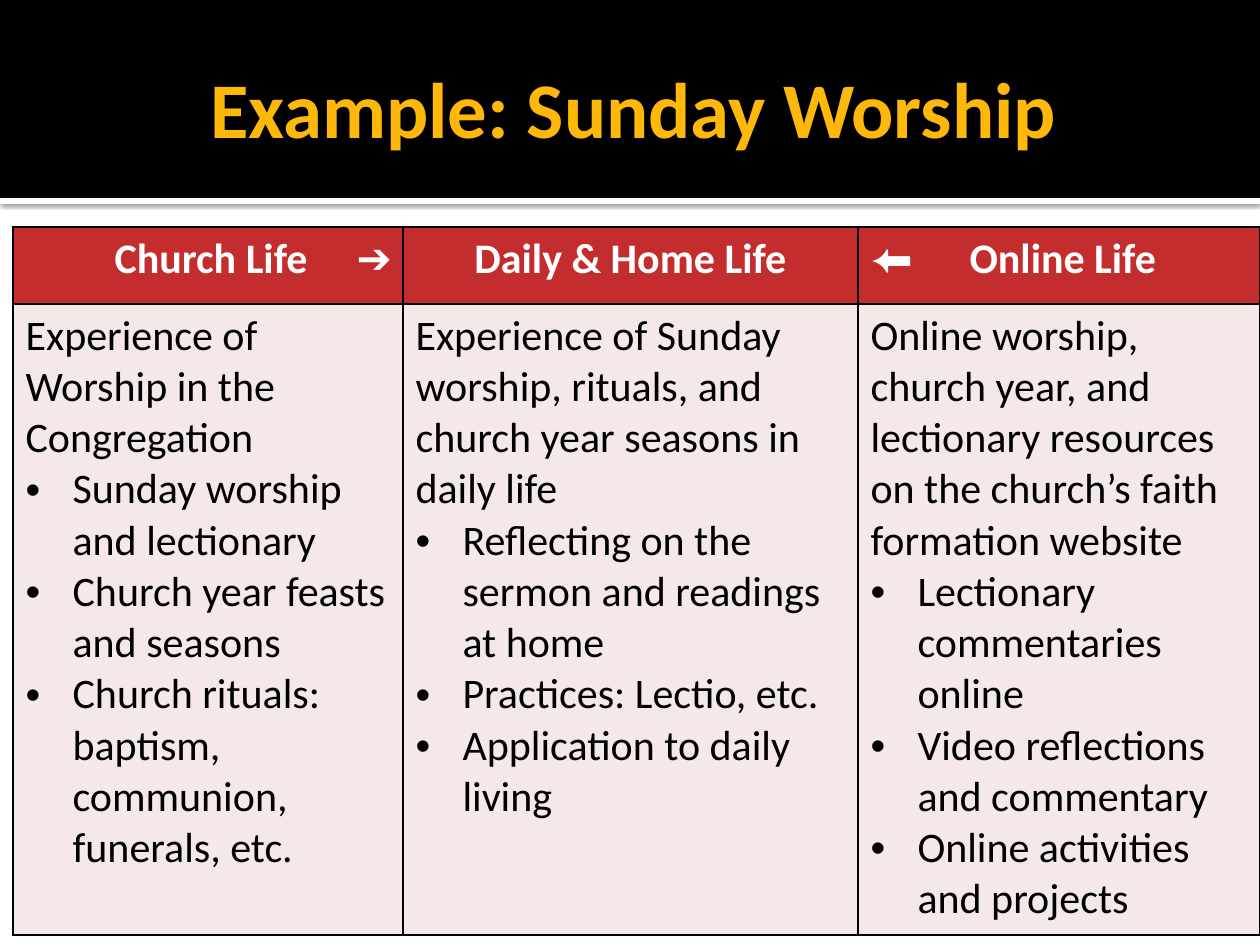
from lxml import etree
from pptx import Presentation
from pptx import util as u
from pptx.dml.color import RGBColor
from pptx.enum import shapes, text
from pptx.oxml import ns

PX = 914400 / 126


def px(n):
    return u.Emu(round(n * PX))


def rgb(color):
    return RGBColor.from_string(color)


prs = Presentation()
prs.slide_width, prs.slide_height = px(1260), px(945)
s = prs.slides.add_slide(prs.slide_layouts[5])

# Header band above a white strip
bands = []
for top, height, color in [(198, 6, "FFFFFF"), (0, 198, "000000")]:
    sp = s.shapes.add_shape(shapes.MSO_SHAPE.RECTANGLE, 0, px(top), px(1260), px(height))
    sp.shadow.inherit = False
    sp.fill.solid()
    sp.fill.fore_color.rgb = rgb(color)
    sp.line.fill.background()
    bands.append(sp)

# Soft shadow under the strip
effects = bands[0]._element.spPr.find(ns.qn("a:effectLst"))
shadow = etree.SubElement(effects, ns.qn("a:outerShdw"), blurRad=str(u.Pt(2.5)),
                          dist=str(u.Pt(0.8)), dir="5400000", algn="t", rotWithShape="0")
black = etree.SubElement(shadow, ns.qn("a:srgbClr"), val="000000")
etree.SubElement(black, ns.qn("a:alpha"), val="60000")

# Title, brought in front of the band
title = s.shapes.title
s.shapes._spTree.append(title._element)
title.left, title.top, title.width, title.height = px(63), px(21), px(1134), px(173)
tf = title.text_frame
tf.text = "Example: Sunday Worship"
tf.auto_size = text.MSO_AUTO_SIZE.NONE
tf.vertical_anchor = text.MSO_ANCHOR.MIDDLE
tf.margin_left = px(13)
tf.margin_right = tf.margin_top = tf.margin_bottom = px(6)
p = tf.paragraphs[0]
p.alignment = text.PP_ALIGN.CENTER
r = p.runs[0]
r.font.name, r.font.size, r.font.bold = "Calibri", u.Pt(45), True
r.font.color.rgb = rgb("FEB80A")

# Columns: width, heading, alignment, heading tab stops, lead, bullets
columns = [
    (390, "\tChurch Life\t➔", text.PP_ALIGN.LEFT, [89, 331],
     "Experience of Worship in the Congregation",
     ["Sunday worship and lectionary", "Church year feasts and seasons",
      "Church rituals: baptism, communion, funerals, etc."]),
    (455, "Daily & Home Life", text.PP_ALIGN.CENTER, [],
     "Experience of Sunday worship, rituals, and church year seasons in daily life",
     ["Reflecting on the sermon and readings at home", "Practices: Lectio, etc.",
      "Application to daily living"]),
    (402, "⬅\tOnline Life", text.PP_ALIGN.LEFT, [99],
     "Online worship, church year, and lectionary resources on the church’s "
     "faith formation website",
     ["Lectionary commentaries online", "Video reflections and commentary",
      "Online activities and projects"]),
]
row_heights = [77, 631]
table = s.shapes.add_table(2, len(columns), px(13), px(227),
                           px(sum(c[0] for c in columns)), px(sum(row_heights))).table
table.horz_banding = False
for row, height in zip(table.rows, row_heights):
    row.height = px(height)

for i, (width, heading, align, tabs, lead, bullets) in enumerate(columns):
    table.columns[i].width = px(width)
    head, body = table.cell(0, i), table.cell(1, i)

    # Heading with its arrow set on tab stops, kept on one line
    head.text_frame.text = heading
    p = head.text_frame.paragraphs[0]
    p.alignment = align
    if tabs:
        head.margin_right = px(4)
        tab_list = etree.SubElement(p._p.get_or_add_pPr(), ns.qn("a:tabLst"))
        for stop in tabs:
            etree.SubElement(tab_list, ns.qn("a:tab"), pos=str(px(stop)), algn="l")

    # Lead sentence and bullets
    body.text_frame.text = "\n".join([lead] + bullets)
    for p in body.text_frame.paragraphs[1:]:
        pPr = p._p.get_or_add_pPr()
        pPr.set("marL", str(px(47)))
        pPr.set("indent", str(px(-47)))
        etree.SubElement(pPr, ns.qn("a:buFont"), typeface="Arial")
        etree.SubElement(pPr, ns.qn("a:buChar"), char="•")

    # Fill, font and borders
    for cell, fill, color, bold in [(head, "C32D2E", "FFFFFF", True),
                                    (body, "F5E8E8", "000000", False)]:
        cell.fill.solid()
        cell.fill.fore_color.rgb = rgb(fill)
        for p in cell.text_frame.paragraphs:
            for r in p.runs:
                r.font.name, r.font.size, r.font.bold = "Calibri", u.Pt(24), bold
                r.font.color.rgb = rgb(color)
        tcPr = cell._tc.get_or_add_tcPr()
        for k, side in enumerate(["a:lnL", "a:lnR", "a:lnT", "a:lnB"]):
            ln = etree.Element(ns.qn(side), w=str(u.Pt(0.75)))
            solid = etree.SubElement(ln, ns.qn("a:solidFill"))
            etree.SubElement(solid, ns.qn("a:srgbClr"), val="000000")
            tcPr.insert(k, ln)

prs.save("out.pptx")
